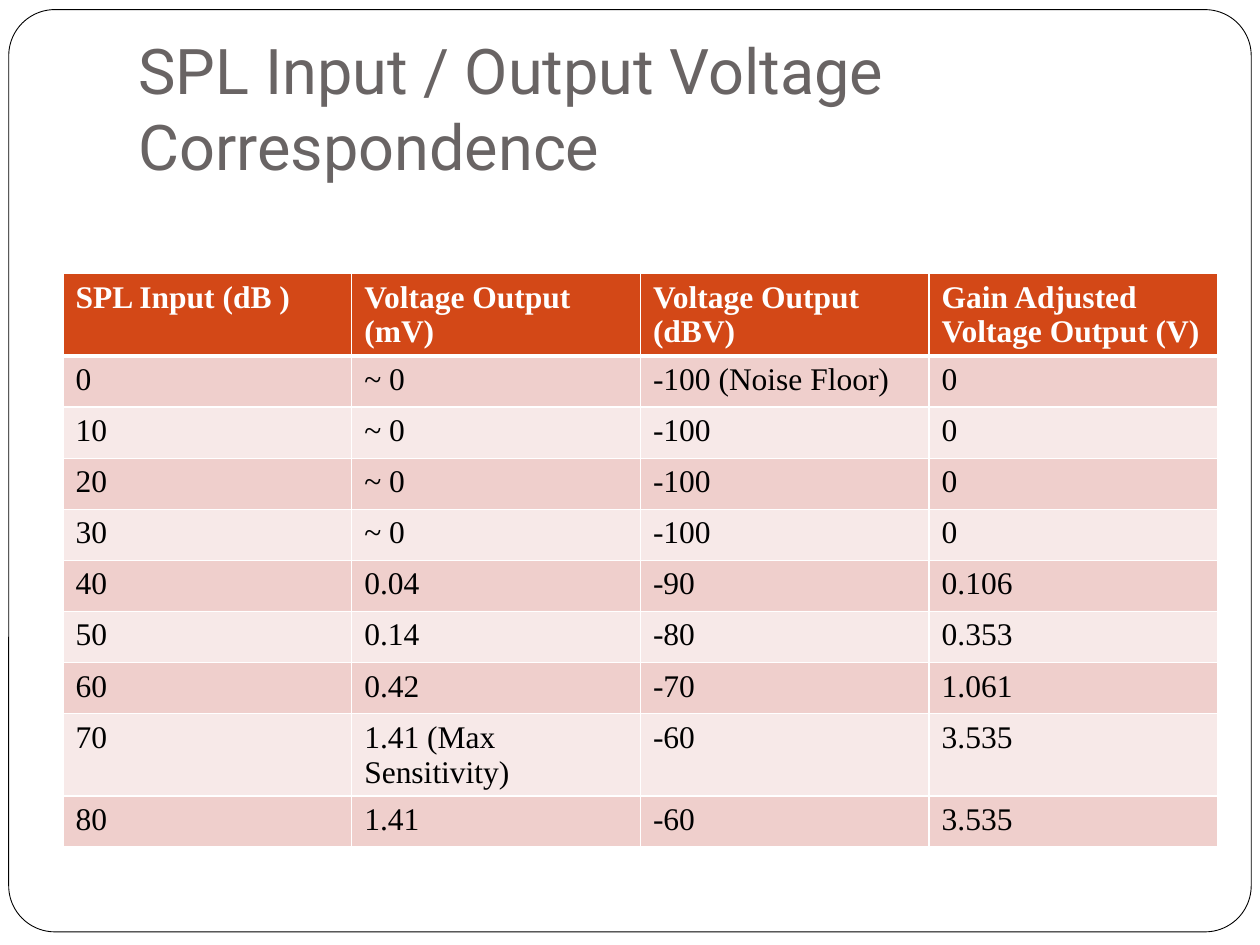
"""Build a slide with a table of sound level inputs and voltage outputs."""
from dataclasses import dataclass

from lxml.etree import SubElement
from pptx import Presentation
from pptx.dml.color import RGBColor
from pptx.enum.shapes import MSO_SHAPE as Shape
from pptx.enum.text import MSO_ANCHOR as Anchor, PP_ALIGN as Align
from pptx.oxml.ns import qn
from pptx.util import Pt


@dataclass(frozen=True)
class Theme:
    white: str = "FFFFFF"
    black: str = "000000"
    title: str = "696464"
    header: str = "D34817"
    bands: tuple = ("EFCFCC", "F7E9E8")
    title_font: str = "Roboto"
    table_font: str = "Times New Roman"
    title_size: int = 36
    table_size: int = 18


theme = Theme()


def style_font(font, name, size, color, bold=False):
    font.name, font.size, font.bold = name, Pt(size), bold
    font.color.rgb = RGBColor.from_string(color)


def add_border(cell, side, width):
    line = SubElement(cell._tc.get_or_add_tcPr(), qn(f"a:ln{side}"), w=str(Pt(width)))
    fill = SubElement(line, qn("a:solidFill"))
    SubElement(fill, qn("a:srgbClr"), val=theme.white)


rows = [
    ("SPL Input (dB )", "Voltage Output (mV)", "Voltage Output (dBV)",
     "Gain Adjusted Voltage Output (V)"),
    ("0", "~ 0", "-100 (Noise Floor)", "0"),
    ("10", "~ 0", "-100", "0"),
    ("20", "~ 0", "-100", "0"),
    ("30", "~ 0", "-100", "0"),
    ("40", "0.04", "-90", "0.106"),
    ("50", "0.14", "-80", "0.353"),
    ("60", "0.42", "-70", "1.061"),
    ("70", "1.41 (Max Sensitivity)", "-60", "3.535"),
    ("80", "1.41", "-60", "3.535"),
]

deck = Presentation()
deck.slide_width, deck.slide_height = Pt(720), Pt(540)
page = deck.slides.add_slide(deck.slide_layouts[5])

title = page.shapes.title
title.left, title.top, title.width, title.height = Pt(72), Pt(21.6), Pt(612), Pt(90)
title_frame = title.text_frame
title_frame.text = "SPL Input / Output Voltage Correspondence"
title_frame.word_wrap = True
title_frame.vertical_anchor = Anchor.BOTTOM
title_frame.margin_left = title_frame.margin_right = Pt(7.2)
title_frame.margin_top, title_frame.margin_bottom = Pt(3.6), Pt(7.2)
title_para = title_frame.paragraphs[0]
title_para.alignment = Align.LEFT
style_font(title_para.font, theme.title_font, theme.title_size, theme.title)

border = page.shapes.add_shape(Shape.ROUNDED_RECTANGLE, Pt(5), Pt(5.5), Pt(710), Pt(527))
border.adjustments[0] = 0.05
border.shadow.inherit = False
border.fill.solid()
border.fill.fore_color.rgb = RGBColor.from_string(theme.white)
border.line.color.rgb = RGBColor.from_string(theme.black)
border.line.width = Pt(0.5)
title._element.addprevious(border._element)

row_height = 29.2
table = page.shapes.add_table(
    len(rows), len(rows[0]), Pt(36), Pt(156.4), Pt(660), Pt(row_height * len(rows))
).table
for row_index, values in enumerate(rows):
    table.rows[row_index].height = Pt(row_height)
    is_header = row_index == 0
    fill_color = theme.header if is_header else theme.bands[(row_index - 1) % 2]
    text_color = theme.white if is_header else theme.black
    widths = {"L": 1, "R": 1, "T": 3 if row_index == 1 else 1, "B": 3 if is_header else 1}
    for column_index, value in enumerate(values):
        cell = table.cell(row_index, column_index)
        cell.text = value
        for side, width in widths.items():
            add_border(cell, side, width)
        cell.fill.solid()
        cell.fill.fore_color.rgb = RGBColor.from_string(fill_color)
        style_font(cell.text_frame.paragraphs[0].font, theme.table_font,
                   theme.table_size, text_color, is_header)

deck.save("out.pptx")
